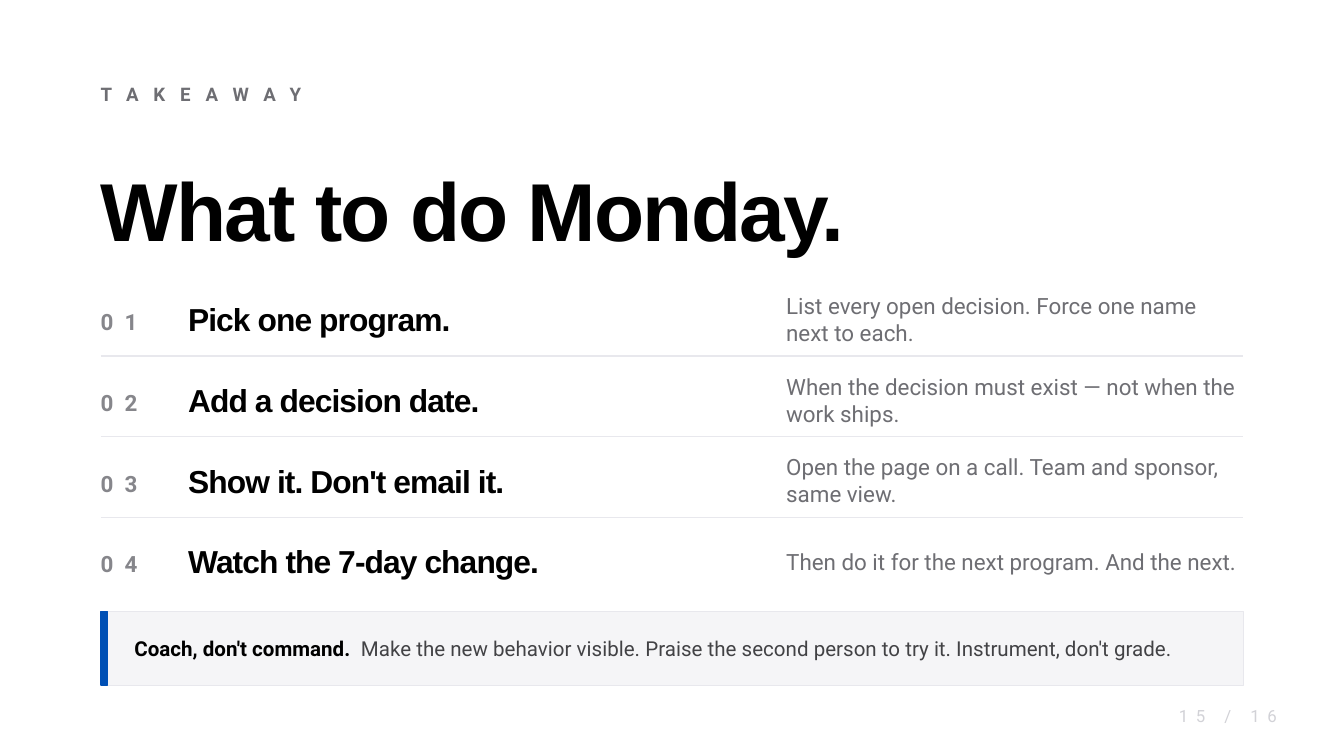
import pptx
import pptx.util
import pptx.dml.color
import pptx.enum.shapes
import pptx.enum.text
import pptx.oxml

Inches = pptx.util.Inches
Pt = pptx.util.Pt

COLORS = {
    "black": "000000",
    "body": "424245",
    "muted": "6E6E73",
    "number": "86868B",
    "page": "D2D2D7",
    "rule": "E8E8ED",
    "panel": "F5F5F7",
    "accent": "0050B5",
}

LEFT, WIDTH = 0.75, 8.5
ROW_TOP, ROW_PITCH, ROW_HEIGHT = 2.1, 0.6, 0.55

STEPS = [
    ("Pick one program.", "List every open decision. Force one name next to each."),
    ("Add a decision date.", "When the decision must exist — not when the work ships."),
    ("Show it. Don't email it.", "Open the page on a call. Team and sponsor, same view."),
    ("Watch the 7-day change.", "Then do it for the next program. And the next."),
]


def rgb(name):
    return pptx.dml.color.RGBColor.from_string(COLORS[name])


def style_run(run, size, color, font="Roboto", bold=False, spacing=0):
    """Format a run; spacing is the extra space between letters in points."""
    run.font.size = Pt(size)
    run.font.name = font
    run.font.bold = bold
    run.font.color.rgb = rgb(color)
    if spacing:
        run.font._element.set("spc", str(int(spacing * 100)))


def prepare_frame(frame, align=pptx.enum.text.PP_ALIGN.LEFT):
    frame.margin_left = frame.margin_right = 0
    frame.margin_top = frame.margin_bottom = 0
    frame.word_wrap = True
    frame.auto_size = pptx.enum.text.MSO_AUTO_SIZE.NONE
    frame.vertical_anchor = pptx.enum.text.MSO_ANCHOR.MIDDLE
    frame.paragraphs[0].alignment = align


def add_text(slide, box, pieces, align=pptx.enum.text.PP_ALIGN.LEFT):
    """Add a one-paragraph text box from (text, style) pieces."""
    frame = slide.shapes.add_textbox(*map(Inches, box)).text_frame
    prepare_frame(frame, align)
    for text, style in pieces:
        run = frame.paragraphs[0].add_run()
        run.text = text
        style_run(run, **style)


def add_title(slide, text):
    title = slide.shapes.title
    title.left, title.top = Inches(LEFT), Inches(1.05)
    title.width, title.height = Inches(WIDTH), Inches(1)
    title.text_frame.text = text
    prepare_frame(title.text_frame)
    style_run(title.text_frame.paragraphs[0].runs[0], 44, "black", "Arial", True, -1)


def add_rule(slide, y):
    rule = slide.shapes.add_connector(
        pptx.enum.shapes.MSO_CONNECTOR.STRAIGHT,
        Inches(LEFT), Inches(y), Inches(LEFT + WIDTH), Inches(y))
    rule.line.color.rgb = rgb("rule")
    rule.line.width = Pt(0.75)
    rule._element.spPr.append(pptx.oxml.parse_xml(
        '<a:effectLst xmlns:a="http://schemas.openxmlformats.org/drawingml/2006/main"/>'))


def add_panel(slide, box, fill, line, line_width):
    panel = slide.shapes.add_shape(
        pptx.enum.shapes.MSO_SHAPE.RECTANGLE, *map(Inches, box))
    panel.shadow.inherit = False
    panel.fill.solid()
    panel.fill.fore_color.rgb = rgb(fill)
    panel.line.color.rgb = rgb(line)
    panel.line.width = Pt(line_width)


def add_step(slide, index, action, detail):
    top = ROW_TOP + index * ROW_PITCH
    add_text(slide, (LEFT, top + 0.07, 0.6, 0.45),
             [(f"{index + 1:02d}", dict(size=12, color="number", bold=True, spacing=6))])
    add_text(slide, (1.4, top, 4.4, ROW_HEIGHT),
             [(action, dict(size=17, color="black", font="Arial", bold=True, spacing=-0.5))])
    add_text(slide, (5.85, top, 3.4, ROW_HEIGHT),
             [(detail, dict(size=12, color="muted"))])
    if index < len(STEPS) - 1:
        add_rule(slide, top + ROW_HEIGHT)


def add_callout(slide):
    top, height = 4.55, 0.55
    add_panel(slide, (LEFT, top, WIDTH, height), "panel", "rule", 0.5)
    add_panel(slide, (LEFT, top, 0.05, height), "accent", "accent", 1)
    add_text(slide, (1, top, 8.2, height), [
        ("Coach, don't command.", dict(size=11, color="black", bold=True)),
        (" ", dict(size=11, color="black", bold=True, spacing=2.7)),
        ("Make the new behavior visible. Praise the second person to try it. "
         "Instrument, don't grade.", dict(size=11, color="body")),
    ])


def main():
    deck = pptx.Presentation()
    deck.slide_width = Inches(10)
    deck.slide_height = deck.slide_width * 9 // 16
    slide = deck.slides.add_slide(deck.slide_layouts[5])

    add_text(slide, (LEFT, 0.55, WIDTH, 0.3),
             [("TAKEAWAY", dict(size=10, color="muted", bold=True, spacing=8))])
    add_title(slide, "What to do Monday.")
    for index, (action, detail) in enumerate(STEPS):
        add_step(slide, index, action, detail)
    add_callout(slide)
    add_text(slide, (8.5, 5.2, 1, 0.25),
             [("15 / 16", dict(size=9, color="page", spacing=4))],
             pptx.enum.text.PP_ALIGN.RIGHT)

    deck.save("out.pptx")


if __name__ == "__main__":
    main()
